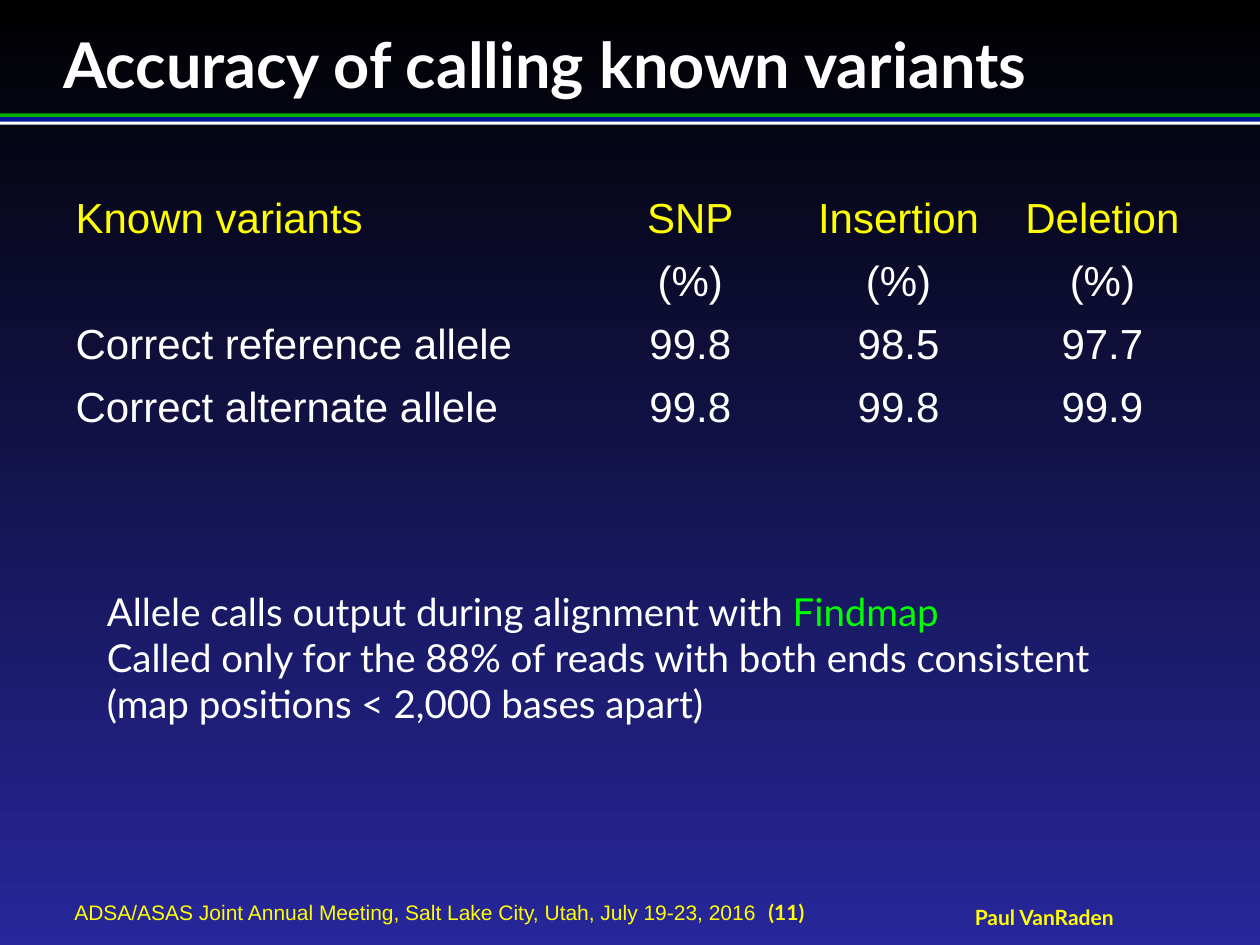
from pptx import Presentation
from pptx.dml.color import RGBColor
from pptx.enum.shapes import MSO_SHAPE
from pptx.enum.text import MSO_ANCHOR, PP_ALIGN
from pptx.util import Pt


def color(hex_code):
    return RGBColor.from_string(hex_code)


def style(run, size, font, hex_code, bold=False):
    run.font.size = Pt(size)
    run.font.name = font
    run.font.bold = bold
    run.font.color.rgb = color(hex_code)


WHITE, YELLOW, GREEN = "FFFFFF", "FFFF00", "00FF00"

prs = Presentation()
prs.slide_width, prs.slide_height = Pt(720), Pt(540)
slide = prs.slides.add_slide(prs.slide_layouts[5])

backdrop = slide.background.fill
backdrop.gradient()
backdrop.gradient_angle = 270
for stop, shade in zip(backdrop.gradient_stops, ("000000", "27279B")):
    stop.color.rgb = color(shade)

for top, height, shade in ((64.8, 2.2, "01AF00"), (69.1, 2.2, WHITE), (67, 2.6, "001799")):
    stripe = slide.shapes.add_shape(MSO_SHAPE.RECTANGLE, 0, Pt(top), Pt(720), Pt(height))
    stripe.shadow.inherit = False
    stripe.fill.solid()
    stripe.fill.fore_color.rgb = color(shade)
    stripe.line.fill.background()

heading = slide.shapes.title
heading.left, heading.top, heading.width, heading.height = Pt(36), Pt(14.4), Pt(664.5), Pt(44)
heading.text_frame.text = "Accuracy of calling known variants"
heading.text_frame.vertical_anchor = MSO_ANCHOR.MIDDLE
heading.text_frame.paragraphs[0].alignment = PP_ALIGN.LEFT
style(heading.text_frame.paragraphs[0].runs[0], 36, "Lato", WHITE, True)

meeting = slide.shapes.add_textbox(Pt(42.5), Pt(514), Pt(490), Pt(14.4))
meeting_line = meeting.text_frame.paragraphs[0]
meeting_line.text = "ADSA/ASAS Joint Annual Meeting, Salt Lake City, Utah, July 19-23, 2016  "
style(meeting_line.runs[0], 12, "Arial", YELLOW)
page = meeting_line.add_run()
page.text = "(11)"
style(page, 12, "Lato", YELLOW, True)

speaker = slide.shapes.add_textbox(Pt(553.5), Pt(517), Pt(86.5), Pt(14.4))
speaker_line = speaker.text_frame.paragraphs[0]
speaker_line.text = "Paul VanRaden"
speaker_line.alignment = PP_ALIGN.CENTER
style(speaker_line.runs[0], 12, "Lato", YELLOW, True)

for frame in (heading.text_frame, meeting.text_frame, speaker.text_frame):
    frame.margin_left = frame.margin_right = frame.margin_top = frame.margin_bottom = 0
    frame.vertical_anchor = MSO_ANCHOR.MIDDLE
    frame.word_wrap = frame is not speaker.text_frame

accuracy = [
    ("Known variants", "SNP", "Insertion", "Deletion"),
    ("", "(%)", "(%)", "(%)"),
    ("Correct reference allele", "99.8", "98.5", "97.7"),
    ("Correct alternate allele", "99.8", "99.8", "99.9"),
]
table = slide.shapes.add_table(4, 4, Pt(36), Pt(108), Pt(648), Pt(118)).table
table.first_row = table.horz_banding = False
table._tbl.tblPr[0].text = "{2D5ABB26-0587-4C30-8999-92F81FD0307C}"
for column, width in zip(table.columns, (302, 113, 125, 108)):
    column.width = Pt(width)
for r, entries in enumerate(accuracy):
    for c, entry in enumerate(entries):
        cell = table.cell(r, c)
        cell.fill.background()
        cell.text_frame.text = entry
        line = cell.text_frame.paragraphs[0]
        line.alignment = PP_ALIGN.CENTER if c else PP_ALIGN.LEFT
        for run in line.runs:
            style(run, 24, "Arial", WHITE if r else YELLOW)

remarks = slide.shapes.add_textbox(Pt(54), Pt(332.5), Pt(609), Pt(87)).text_frame
remarks.word_wrap = True
remarks.text = (
    "Allele calls output during alignment with \n"
    "Called only for the 88% of reads with both ends consistent\n"
    "(map positions < 2,000 bases apart)"
)
for paragraph in remarks.paragraphs:
    style(paragraph.runs[0], 22, "Lato", WHITE)
program = remarks.paragraphs[0].add_run()
program.text = "Findmap"
style(program, 22, "Lato", GREEN)

prs.save("out.pptx")
